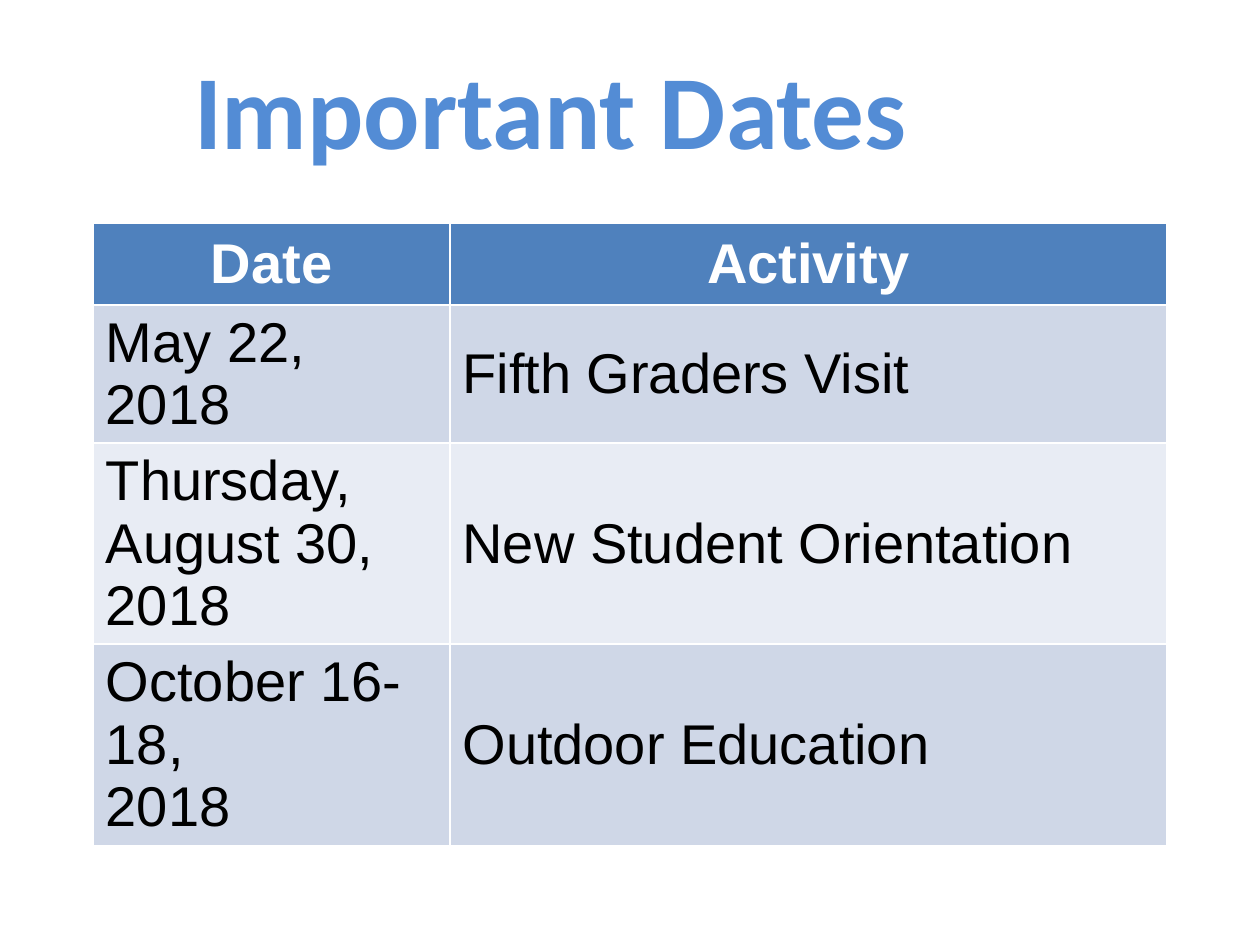
from dataclasses import dataclass

from pptx import Presentation
from pptx import util as u
from pptx.dml.color import RGBColor
from pptx.enum import text


@dataclass(frozen=True)
class Theme:
    title: str = "538CD5"
    head: str = "4F81BD"
    bands: tuple = ("CFD7E7", "E8ECF4")
    light: str = "FFFFFF"
    dark: str = "000000"
    title_font: str = "Calibri"
    body_font: str = "Arial"
    title_size: int = 60
    body_size: int = 32


class Deck:
    """Holds the theme and the current slide; lengths are shares of its size."""

    def __init__(self, theme, width, height):
        self.theme = theme
        self.prs = Presentation()
        self.prs.slide_width = u.Inches(width)
        self.prs.slide_height = u.Inches(height)
        self.slide = self.prs.slides.add_slide(self.prs.slide_layouts[5])

    def wide(self, share):
        return round(self.prs.slide_width * share)

    def high(self, share):
        return round(self.prs.slide_height * share)

    def area(self, x, y, w, h):
        return self.wide(x), self.high(y), self.wide(w), self.high(h)

    def label(self, frame, words, color, align, form):
        frame.text = words
        frame.word_wrap = True
        for para in frame.paragraphs:
            para.alignment = align
            for run in para.runs:
                run.font.color.rgb = RGBColor.from_string(color)
                for name, value in form.items():
                    setattr(run.font, name, value)

    def title(self, words, area):
        th, box = self.theme, self.slide.shapes.title
        for name, value in zip(("left", "top", "width", "height"), self.area(*area)):
            setattr(box, name, value)
        form = {"name": th.title_font, "size": u.Pt(th.title_size), "bold": True}
        self.label(box.text_frame, words, th.title, text.PP_ALIGN.LEFT, form)
        box.text_frame.auto_size = text.MSO_AUTO_SIZE.NONE

    def table(self, rows, area, cols, heights):
        """The table style draws the white rules between cells."""
        th = self.theme
        grid = self.slide.shapes.add_table(len(rows), len(cols), *self.area(*area)).table
        for col, share in zip(grid.columns, cols):
            col.width = self.wide(share)
        for i, row in enumerate(rows):
            head = i == 0
            grid.rows[i].height = self.high(heights[min(i, 1)])
            fill = th.head if head else th.bands[(i - 1) % 2]
            color = th.light if head else th.dark
            align = text.PP_ALIGN.CENTER if head else text.PP_ALIGN.LEFT
            form = {"name": th.body_font, "size": u.Pt(th.body_size), "bold": head}
            for cell, words in zip(grid.rows[i].cells, row):
                cell.vertical_anchor = text.MSO_ANCHOR.MIDDLE
                cell.fill.solid()
                cell.fill.fore_color.rgb = RGBColor.from_string(fill)
                self.label(cell.text_frame, words, color, align, form)


def main():
    deck = Deck(Theme(), 10, 7.5)
    deck.title("Important Dates", (0.144, 0.04, 0.7, 0.148))
    dates = [
        ("Date", "Activity"),
        ("May 22, 2018", "Fifth Graders Visit"),
        ("Thursday, August 30, 2018", "New Student Orientation"),
        ("October 16-18,\n2018", "Outdoor Education"),
    ]
    deck.table(dates, (0.074, 0.236, 0.852, 0.45),
               cols=(0.283, 0.569), heights=(0.0867, 0.1213))
    deck.prs.save("out.pptx")


if __name__ == "__main__":
    main()
